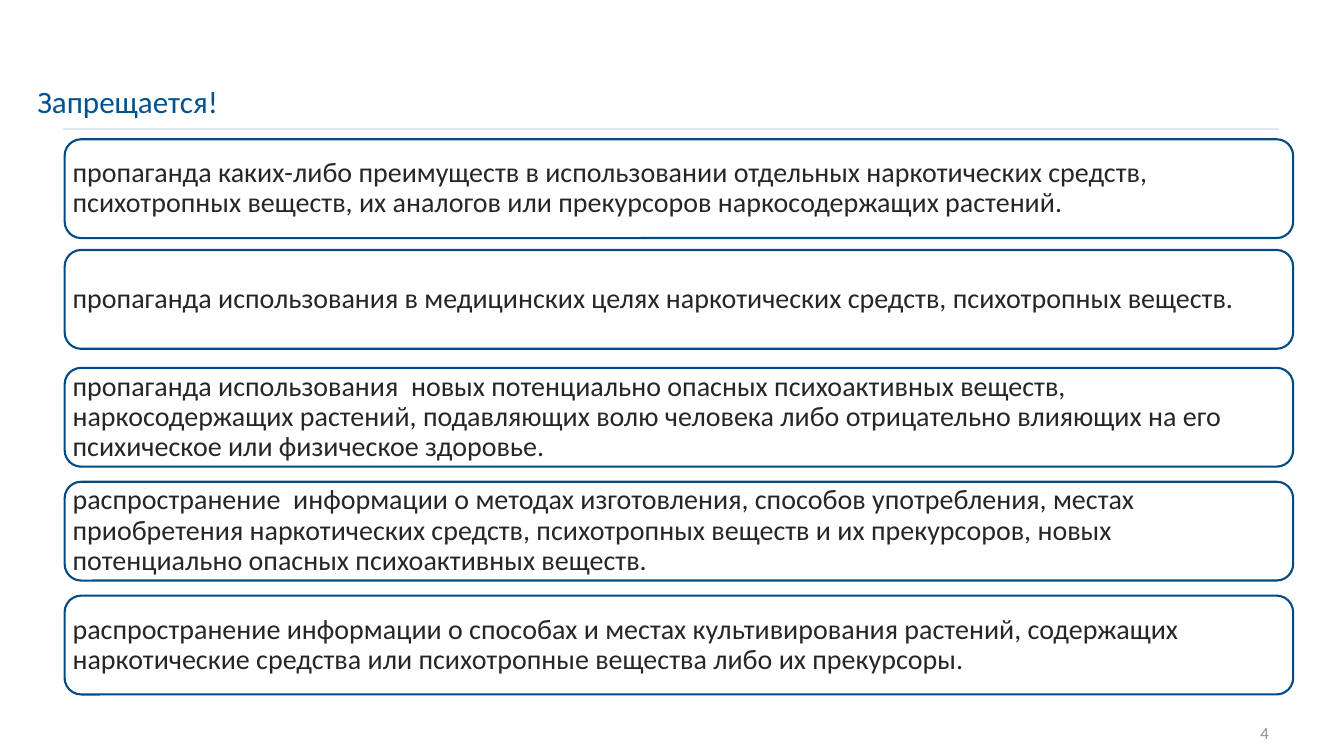
from lxml import etree
from pptx import Presentation
from pptx.dml.color import RGBColor
from pptx.enum.shapes import MSO_CONNECTOR, MSO_SHAPE
from pptx.enum.text import MSO_ANCHOR, PP_ALIGN
from pptx.oxml.ns import qn
from pptx.util import Cm, Pt

COLORS = {
    "title": "005390",
    "border": "004B83",
    "text": "262626",
    "number": "8E8E8E",
    "card": "FFFFFF",
}
FONT = "Calibri"

CARD_LEFT, CARD_WIDTH, CARD_HEIGHT = 1.63, 30.96, 2.49
CARDS = [
    (3.51, "пропаганда каких-либо преимуществ в использовании отдельных наркотических средств, "
           "психотропных веществ, их аналогов или прекурсоров наркосодержащих растений."),
    (6.3, "пропаганда использования в медицинских целях наркотических средств, "
          "психотропных веществ."),
    (9.27, "пропаганда использования  новых потенциально опасных психоактивных веществ, "
           "наркосодержащих растений, подавляющих волю человека либо отрицательно влияющих "
           "на его психическое или физическое здоровье."),
    (12.14, "распространение  информации о методах изготовления, способов употребления, местах "
            "приобретения наркотических средств, психотропных веществ и их прекурсоров, новых "
            "потенциально опасных психоактивных веществ."),
    (15.01, "распространение информации о способах и местах культивирования растений, содержащих "
            "наркотические средства или психотропные вещества либо их прекурсоры."),
]


def rgb(name):
    return RGBColor.from_string(COLORS[name])


def write(sp, text, size, color, align=PP_ALIGN.LEFT, spacing=0.9):
    tf = sp.text_frame
    tf.word_wrap = True
    tf.vertical_anchor = MSO_ANCHOR.MIDDLE
    p = tf.paragraphs[0]
    p.text = text
    p.alignment = align
    p.line_spacing = spacing
    p.font.name, p.font.size = FONT, Pt(size)
    p.font.color.rgb = rgb(color)
    return tf


def add_text(s, box, *args, **kwargs):
    sp = s.shapes.add_textbox(*map(Cm, box))
    write(sp, *args, **kwargs)


def add_rule(s, left, top, width):
    """Draw the faint line below the title."""
    line = s.shapes.add_connector(
        MSO_CONNECTOR.STRAIGHT, Cm(left), Cm(top), Cm(left + width), Cm(top))
    line.line.width = Pt(1)
    line.line.color.rgb = rgb("title")
    sp_pr = line._element.spPr
    etree.SubElement(sp_pr.find(".//" + qn("a:srgbClr")), qn("a:alpha"), val="20000")
    etree.SubElement(sp_pr, qn("a:effectLst"))


def add_card(s, left, top, width, height, text):
    sp = s.shapes.add_shape(
        MSO_SHAPE.ROUNDED_RECTANGLE, Cm(left), Cm(top), Cm(width), Cm(height))
    sp.shadow.inherit = False
    sp.fill.solid()
    sp.fill.fore_color.rgb = rgb("card")
    sp.line.color.rgb = rgb("border")
    sp.line.width = Pt(1.5)
    tf = write(sp, text, 20, "text")
    tf.margin_left = tf.margin_right = tf.margin_top = tf.margin_bottom = Cm(0.08)


def main():
    prs = Presentation()
    prs.slide_width, prs.slide_height = Cm(33.87), Cm(19.05)
    s = prs.slides.add_slide(prs.slide_layouts[6])
    add_rule(s, 1.6, 3.25, 30.63)
    add_text(s, (0.69, 1.65, 26.62, 1.93), "Запрещается!", 22.2, "title")
    add_text(s, (30.02, 17.96, 2.21, 1.02), "4", 12, "number",
             align=PP_ALIGN.RIGHT, spacing=1.0)
    for top, text in CARDS:
        add_card(s, CARD_LEFT, top, CARD_WIDTH, CARD_HEIGHT, text)
    prs.save("out.pptx")


if __name__ == "__main__":
    main()
